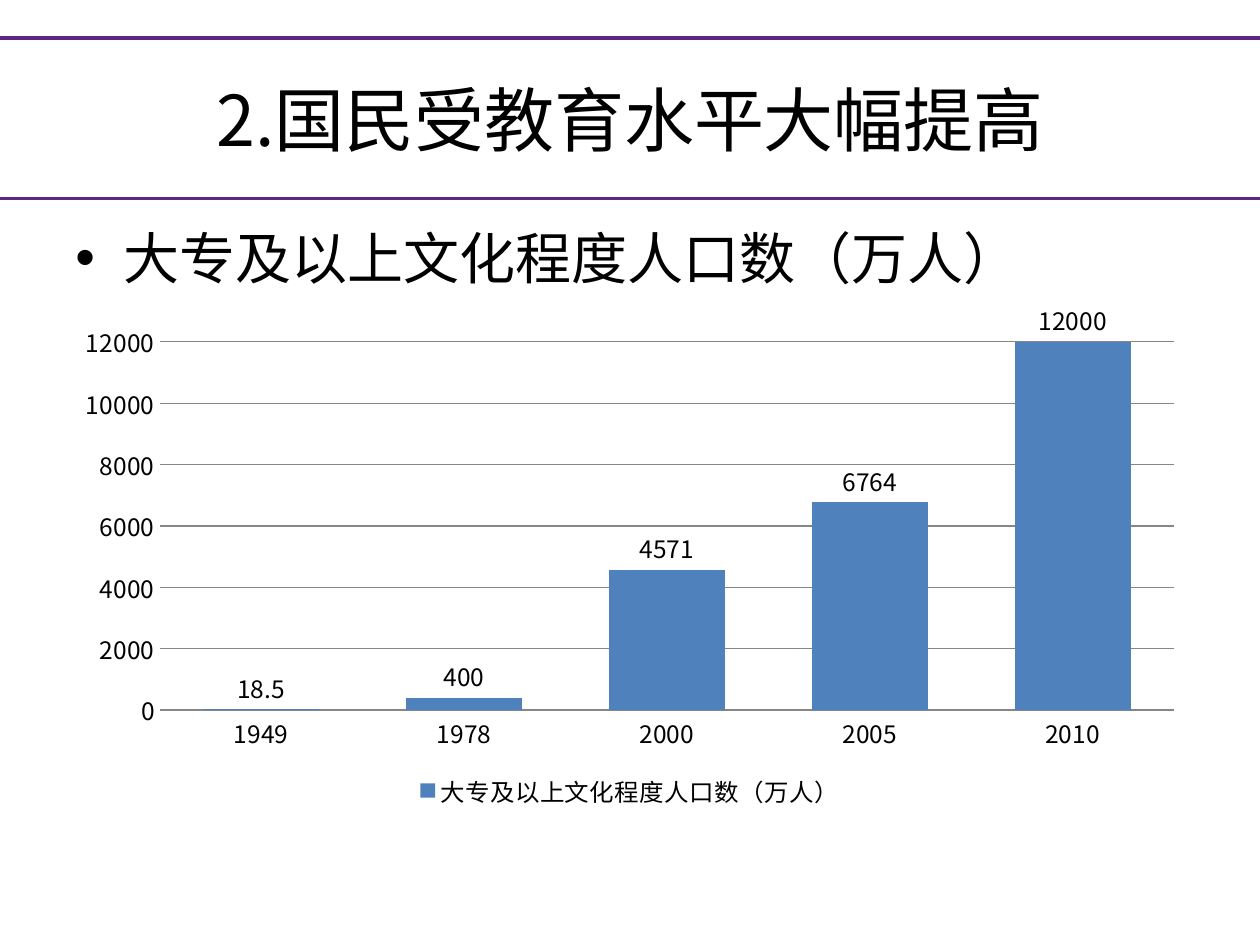
from dataclasses import dataclass

from lxml.etree import SubElement
from pptx import Presentation
from pptx.chart.data import CategoryChartData
from pptx.dml.color import RGBColor
from pptx.enum.chart import (XL_CHART_TYPE, XL_LABEL_POSITION,
                             XL_LEGEND_POSITION, XL_TICK_MARK)
from pptx.enum.shapes import MSO_CONNECTOR
from pptx.enum.text import MSO_ANCHOR, PP_ALIGN
from pptx.oxml.ns import qn
from pptx.util import Inches, Pt


@dataclass(frozen=True)
class Theme:
    ink: RGBColor = RGBColor(0x00, 0x00, 0x00)
    rule: RGBColor = RGBColor(0x5D, 0x28, 0x84)
    bar: RGBColor = RGBColor(0x4F, 0x81, 0xBD)
    grid: RGBColor = RGBColor(0x86, 0x86, 0x86)
    title_size: Pt = Pt(40)
    body_size: Pt = Pt(32)
    chart_size: Pt = Pt(14)
    rule_width: Pt = Pt(2)
    grid_width: Pt = Pt(0.75)
    chinese_font: str = "Noto Sans CJK SC"
    latin_font: str = "Calibri"


def apply(target, values):
    """Set each attribute of target named in values."""
    for name, value in values.items():
        setattr(target, name, value)


class SlideBuilder:
    """Places elements by shares of the slide's width and height."""

    def __init__(self, presentation, theme):
        self.theme = theme
        self.width = presentation.slide_width
        self.height = presentation.slide_height
        self.slide = presentation.slides.add_slide(presentation.slide_layouts[6])

    def box(self, left, top, width, height):
        return (round(left * self.width), round(top * self.height),
                round(width * self.width), round(height * self.height))

    def style_font(self, font, size, name):
        apply(font, {"size": size, "name": name})
        font.color.rgb = self.theme.ink

    def rule(self, top, left=0):
        begin_x, y, length, _ = self.box(left, top, 1 - left, 0)
        line = self.slide.shapes.add_connector(
            MSO_CONNECTOR.STRAIGHT, begin_x, y, begin_x + length, y)
        line.line.color.rgb = self.theme.rule
        line.line.width = self.theme.rule_width
        SubElement(line._element.spPr, qn("a:effectLst"))

    def text(self, content, area, size, font_name, anchor=MSO_ANCHOR.TOP,
             align=PP_ALIGN.LEFT, bulleted=False):
        frame = self.slide.shapes.add_textbox(*self.box(*area)).text_frame
        apply(frame, {"word_wrap": True, "vertical_anchor": anchor})
        paragraph = frame.paragraphs[0]
        paragraph.alignment = align
        if bulleted:
            self.bullet(paragraph)
        run = paragraph.add_run()
        run.text = content
        self.style_font(run.font, size, font_name)
        SubElement(run._r.get_or_add_rPr(), qn("a:ea"),
                   typeface=self.theme.chinese_font)

    def bullet(self, paragraph, indent=Inches(0.38)):
        properties = paragraph._p.get_or_add_pPr()
        properties.set("marL", str(indent))
        properties.set("indent", str(-indent))
        SubElement(properties, qn("a:buFont"), typeface="Arial")
        SubElement(properties, qn("a:buChar"), char="•")

    def column_chart(self, name, data, area, maximum):
        chart_data = CategoryChartData()
        chart_data.categories = list(data)
        chart_data.add_series(name, data.values())
        chart = self.slide.shapes.add_chart(
            XL_CHART_TYPE.COLUMN_CLUSTERED, *self.box(*area), chart_data).chart
        chart.has_title = False
        self.style_font(chart.font, self.theme.chart_size, self.theme.chinese_font)
        chart.has_legend = True
        apply(chart.legend, {"position": XL_LEGEND_POSITION.BOTTOM,
                             "include_in_layout": False})
        self.style_axes(chart, maximum)

        plot = chart.plots[0]
        apply(plot, {"gap_width": 75, "overlap": -25,
                     "vary_by_categories": False, "has_data_labels": True})
        apply(plot.data_labels, {"show_value": True,
                                 "position": XL_LABEL_POSITION.OUTSIDE_END})
        fill = plot.series[0].format.fill
        fill.solid()
        fill.fore_color.rgb = self.theme.bar

    def style_axes(self, chart, maximum):
        no_ticks = {"major_tick_mark": XL_TICK_MARK.NONE,
                    "minor_tick_mark": XL_TICK_MARK.NONE}
        apply(chart.category_axis, no_ticks)
        apply(chart.value_axis, no_ticks | {
            "minimum_scale": 0, "maximum_scale": maximum, "major_unit": 2000,
            "has_major_gridlines": True})
        chart.value_axis.format.line.fill.background()
        for line in (chart.category_axis.format.line,
                     chart.value_axis.major_gridlines.format.line):
            line.color.rgb = self.theme.grid
            line.width = self.theme.grid_width


def main():
    presentation = Presentation()
    apply(presentation, {"slide_width": Inches(10), "slide_height": Inches(7.5)})
    theme = Theme()
    builder = SlideBuilder(presentation, theme)
    margin, content_width = 0.05, 0.9
    topic = "大专及以上文化程度人口数（万人）"
    graduates = {"1949": 18.5, "1978": 400, "2000": 4571,
                 "2005": 6764, "2010": 12000}

    builder.rule(0.04)
    builder.rule(0.21)
    builder.text("2.国民受教育水平大幅提高", (margin, 0.04, content_width, 0.17),
                 theme.title_size, theme.chinese_font,
                 anchor=MSO_ANCHOR.MIDDLE, align=PP_ALIGN.CENTER)
    builder.text(topic, (margin, 0.23, content_width, 0.66),
                 theme.body_size, theme.latin_font, bulleted=True)
    builder.column_chart(topic, graduates, (margin, 0.32, content_width, 0.54),
                         maximum=12000)
    presentation.save("out.pptx")


if __name__ == "__main__":
    main()
